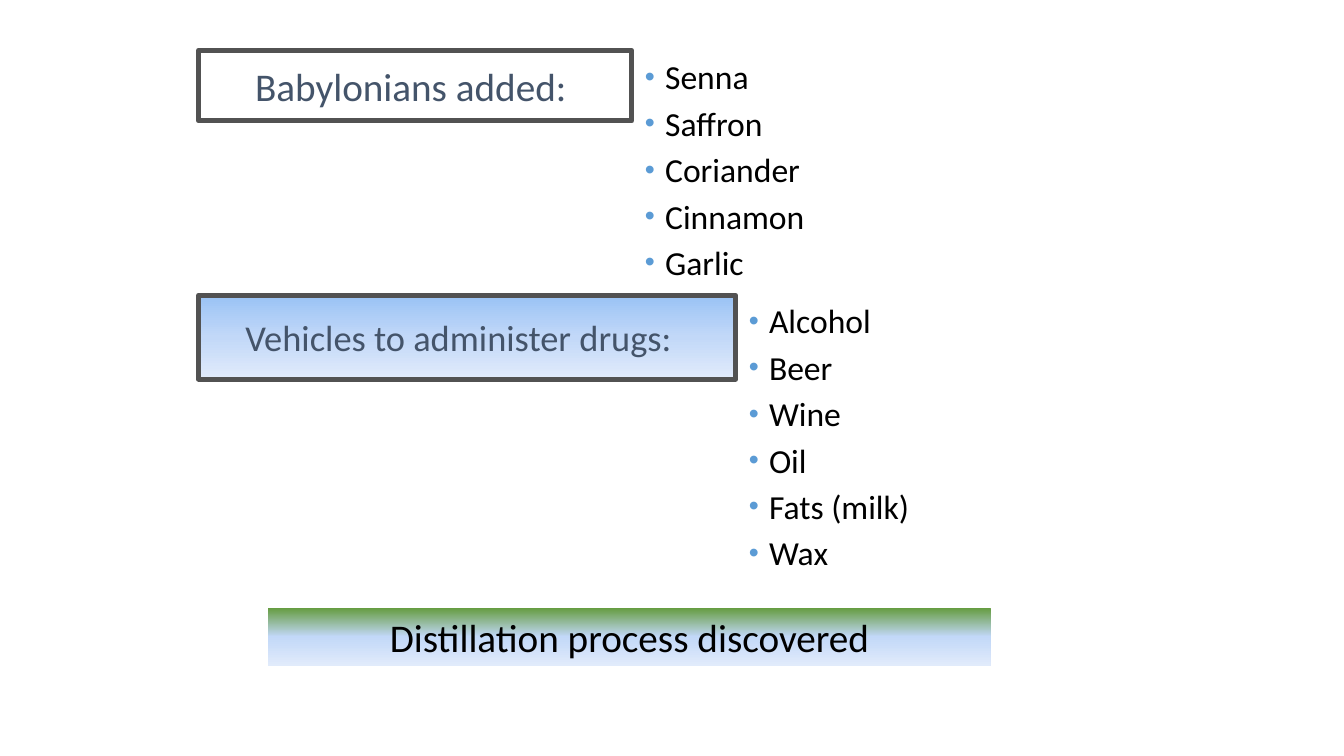
from copy import deepcopy
from dataclasses import dataclass

from lxml import etree
from pptx import Presentation
from pptx.dml.color import RGBColor
from pptx.enum import shapes, text
from pptx.oxml import ns
from pptx.util import Pt


@dataclass(frozen=True)
class Theme:
    font: str = "Calibri"
    heading: str = "44546A"
    body: str = "000000"
    bullet: str = "5B9BD5"
    border: str = "525252"
    blue: tuple = ("9AC3F5", "C2D8F8", "E1EBFB")
    green: tuple = ("659C40", "C2D8F8", "E1EBFB")
    large: int = 28
    medium: int = 26
    small: int = 24


class SlideBuilder:
    def __init__(self, page, theme):
        self.page = page
        self.theme = theme

    def apply_format(self, target, **values):
        for name, value in values.items():
            setattr(target, name, value)

    def add_words(self, para, words, size, color):
        span = para.add_run()
        span.text = words
        self.apply_format(span.font, name=self.theme.font, size=Pt(size))
        span.font.color.rgb = RGBColor.from_string(color)

    def paint_gradient(self, box, colors):
        box.fill.gradient()
        box.fill.gradient_angle = 270
        stop_list = box._element.spPr.find(".//" + ns.qn("a:gsLst"))
        stop_list.insert(1, deepcopy(stop_list[0]))
        for index, (stop, color) in enumerate(zip(box.fill.gradient_stops, colors)):
            stop.position = index / 2
            stop.color.rgb = RGBColor.from_string(color)

    def banner(self, area, words, size, color, gradient=None, border=True, **frame_values):
        box = self.page.shapes.add_shape(
            shapes.MSO_SHAPE.RECTANGLE, *(Pt(value) for value in area)
        )
        box.shadow.inherit = False
        if gradient:
            self.paint_gradient(box, gradient)
        else:
            box.fill.background()
        if border:
            box.line.color.rgb = RGBColor.from_string(self.theme.border)
            box.line.width = Pt(3.5)
            outline = box._element.spPr.find(ns.qn("a:ln"))
            etree.SubElement(outline, ns.qn("a:round"))
        else:
            box.line.fill.background()
        self.apply_format(box.text_frame, word_wrap=True, **frame_values)
        para = box.text_frame.paragraphs[0]
        para.alignment = text.PP_ALIGN.CENTER
        self.add_words(para, words, size, color)

    def add_bullet(self, para):
        properties = para._p.get_or_add_pPr()
        properties.set("marL", str(Pt(14.4)))
        properties.set("indent", str(Pt(-14.4)))
        color = etree.SubElement(properties, ns.qn("a:buClr"))
        etree.SubElement(color, ns.qn("a:srgbClr"), val=self.theme.bullet)
        etree.SubElement(properties, ns.qn("a:buSzPct"), val="85000")
        etree.SubElement(properties, ns.qn("a:buFont"), typeface="Arial")
        etree.SubElement(properties, ns.qn("a:buChar"), char="•")

    def bullet_list(self, area, items):
        box = self.page.shapes.add_textbox(*(Pt(value) for value in area))
        frame = box.text_frame
        self.apply_format(frame, word_wrap=True, vertical_anchor=text.MSO_ANCHOR.TOP)
        for index, item in enumerate(items):
            para = frame.add_paragraph() if index else frame.paragraphs[0]
            self.add_bullet(para)
            if index:
                para.space_before = Pt(4.3)
            self.add_words(para, item, self.theme.small, self.theme.body)


def main():
    deck = Presentation()
    deck.slide_width, deck.slide_height = Pt(960), Pt(540)
    theme = Theme()
    builder = SlideBuilder(deck.slides.add_slide(deck.slide_layouts[6]), theme)

    builder.banner(
        (141.8, 36, 309.6, 50.4), "Babylonians added:", theme.large, theme.heading,
        vertical_anchor=text.MSO_ANCHOR.MIDDLE, margin_right=Pt(13.5),
    )
    builder.bullet_list(
        (453.6, 36.7, 162, 174.3),
        ["Senna", "Saffron", "Coriander", "Cinnamon", "Garlic"],
    )
    builder.banner(
        (141.8, 211, 383.8, 59.8), "Vehicles to administer drugs:", theme.medium,
        theme.heading, theme.blue,
        vertical_anchor=text.MSO_ANCHOR.MIDDLE, margin_right=Pt(19),
    )
    builder.bullet_list(
        (527.8, 211, 162, 221),
        ["Alcohol", "Beer", "Wine", "Oil", "Fats (milk)", "Wax"],
    )
    builder.banner(
        (191.5, 434.2, 516.2, 41.2), "Distillation process discovered", theme.large,
        theme.body, theme.green, border=False,
        vertical_anchor=text.MSO_ANCHOR.TOP,
        auto_size=text.MSO_AUTO_SIZE.SHAPE_TO_FIT_TEXT,
    )
    deck.save("out.pptx")


if __name__ == "__main__":
    main()
